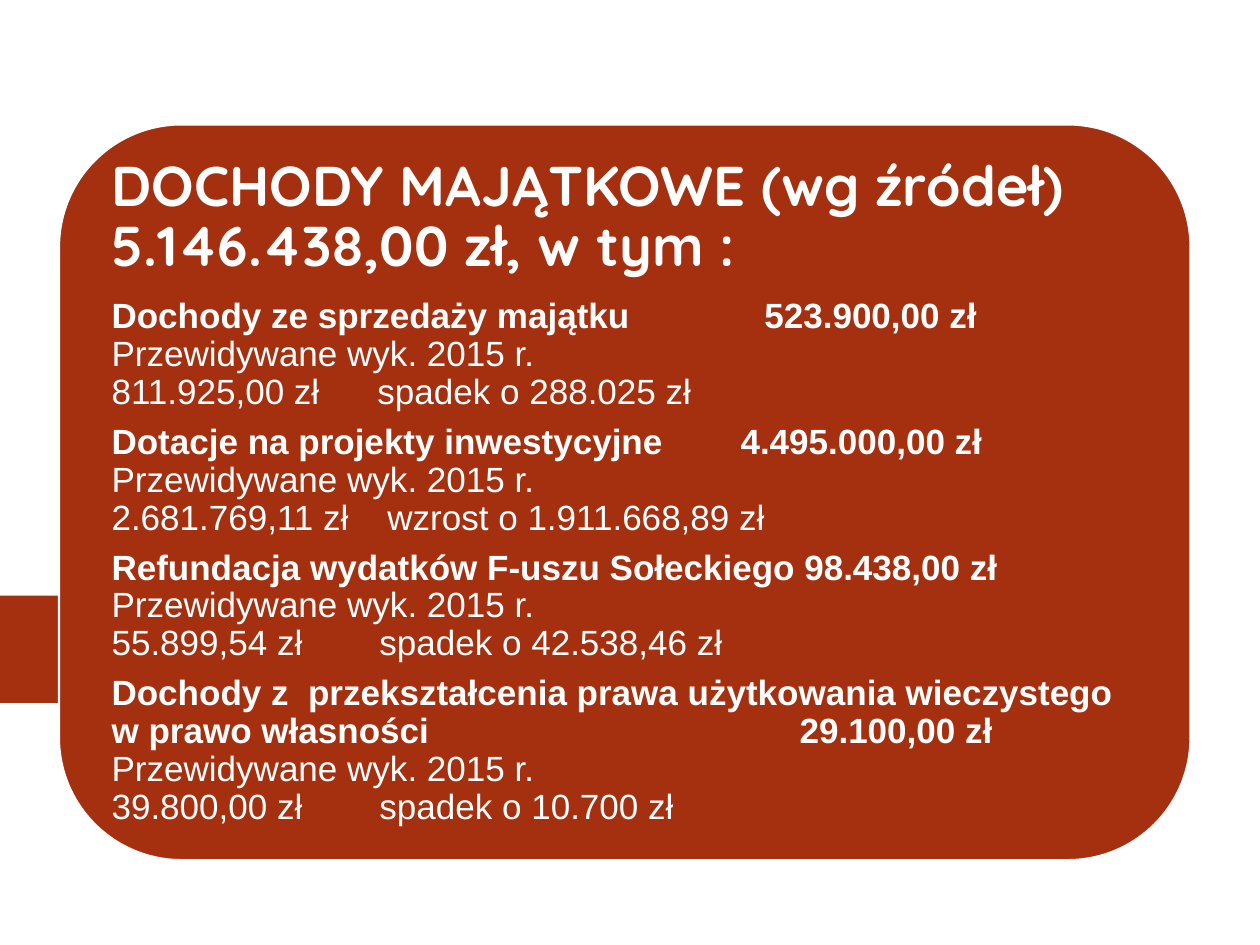
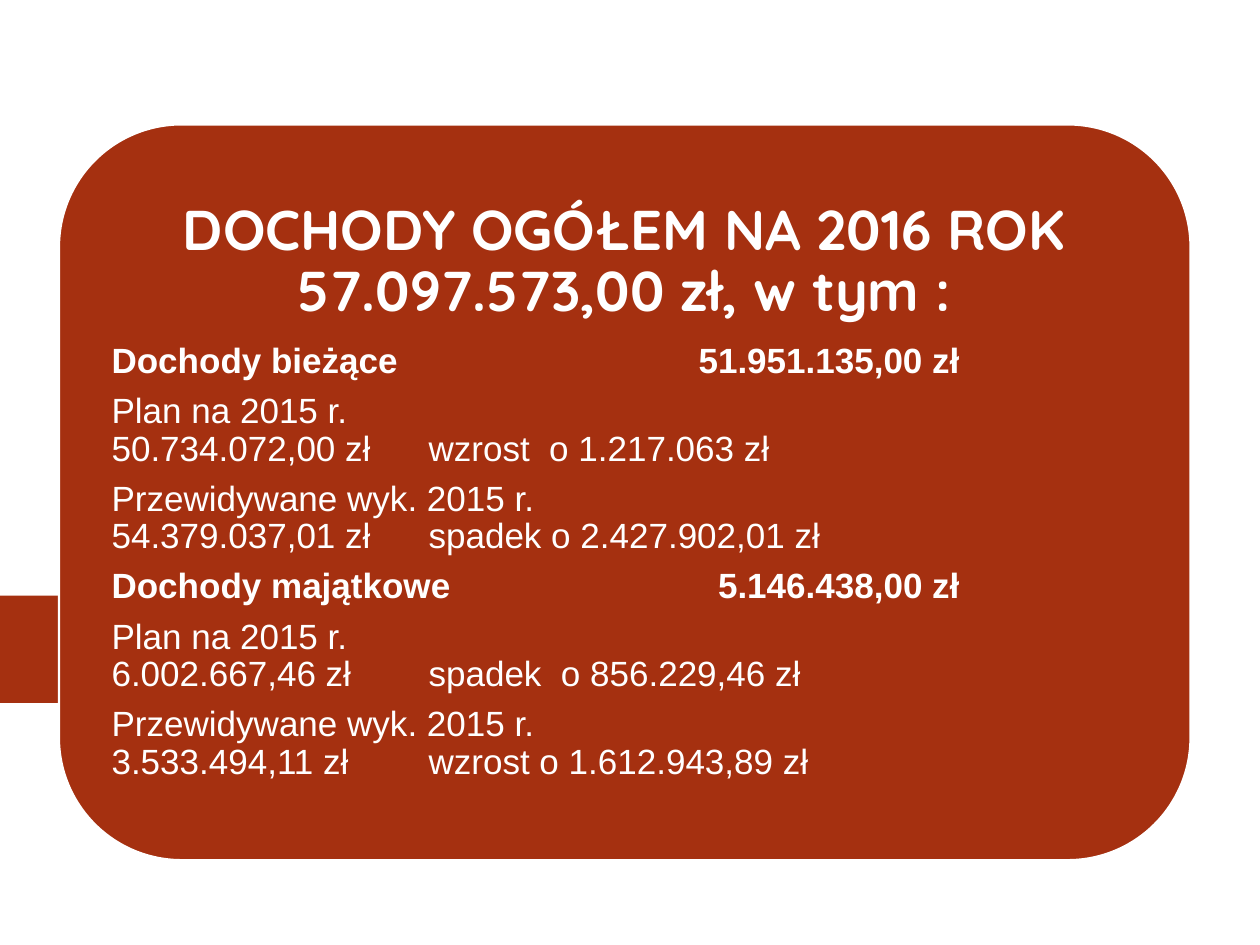
from dataclasses import dataclass
from typing import NamedTuple

from lxml import etree
from pptx import Presentation
from pptx import util as u
from pptx.dml.color import RGBColor
from pptx.enum import shapes, text
from pptx.oxml import ns


@dataclass(frozen=True)
class Theme:
    rust: RGBColor = RGBColor(0xA5, 0x30, 0x10)
    white: RGBColor = RGBColor(0xFF, 0xFF, 0xFF)
    title_font: str = "Quicksand"
    body_font: str = "Arial"
    title_size: int = 32
    body_size: int = 20
    line_spacing: float = 0.9
    gap_ratio: float = 0.35  # space after, as a share of the type size


THEME = Theme()


class Stop(NamedTuple):
    """A tab stop, in centimetres from the text edge."""
    cm: float
    side: str = "l"


@dataclass(frozen=True)
class Entry:
    """A paragraph: bold lines first, then plain lines."""
    bold: tuple[str, ...] = ()
    plain: tuple[str, ...] = ()
    stops: tuple[Stop, ...] = ()


@dataclass(frozen=True)
class IncomePage:
    title: tuple[str, ...]
    align: text.PP_ALIGN
    entries: tuple[Entry, ...]


FORECAST = "Przewidywane wyk. 2015 r."
PLAN = "Plan na 2015 r."
TOTAL_STOP = (Stop(17.1, "r"),)
CHANGE_STOP = (Stop(6.39),)

PAGES = (
    IncomePage(
        ("DOCHODY MAJĄTKOWE (wg źródeł)", "5.146.438,00 zł, w tym :"),
        text.PP_ALIGN.LEFT,
        (
            Entry(("Dochody ze sprzedaży majątku\t523.900,00 zł",),
                  (FORECAST, "811.925,00 zł\tspadek o 288.025 zł"),
                  (Stop(5.36), Stop(13.16))),
            Entry(("Dotacje na projekty inwestycyjne\t4.495.000,00 zł",),
                  (FORECAST, "2.681.769,11 zł\twzrost o 1.911.668,89 zł"),
                  (Stop(5.56), Stop(12.68))),
            Entry(("Refundacja wydatków F-uszu Sołeckiego 98.438,00 zł",),
                  (FORECAST, "55.899,54 zł\tspadek o 42.538,46 zł"),
                  (Stop(5.4),)),
            Entry(("Dochody z  przekształcenia prawa użytkowania wieczystego "
                   "w prawo własności\t29.100,00 zł",),
                  (FORECAST, "39.800,00 zł\tspadek o 10.700 zł"),
                  (Stop(5.4), Stop(13.87))),
        ),
    ),
    IncomePage(
        ("DOCHODY OGÓŁEM NA 2016 ROK", "57.097.573,00 zł, w tym :"),
        text.PP_ALIGN.CENTER,
        (
            Entry(bold=("Dochody bieżące\t51.951.135,00 zł",), stops=TOTAL_STOP),
            Entry(plain=(PLAN, "50.734.072,00 zł\twzrost  o 1.217.063 zł"),
                  stops=CHANGE_STOP),
            Entry(plain=(FORECAST, "54.379.037,01 zł\tspadek o 2.427.902,01 zł"),
                  stops=CHANGE_STOP),
            Entry(bold=("Dochody majątkowe\t5.146.438,00 zł",), stops=TOTAL_STOP),
            Entry(plain=(PLAN, "6.002.667,46 zł\tspadek  o 856.229,46 zł"),
                  stops=CHANGE_STOP),
            Entry(plain=(FORECAST, "3.533.494,11 zł\twzrost o 1.612.943,89 zł"),
                  stops=CHANGE_STOP),
        ),
    ),
)


def add_panel(page, kind, left: float, top: float, width: float, height: float):
    """Add a rust shape without shadow or outline."""
    panel = page.shapes.add_shape(
        kind, u.Cm(left), u.Cm(top), u.Cm(width), u.Cm(height))
    panel.shadow.inherit = False
    panel.fill.solid()
    panel.fill.fore_color.rgb = THEME.rust
    panel.line.fill.background()
    return panel


def add_backdrop(page) -> None:
    """Draw the side arrow and the rounded card over it."""
    add_panel(page, shapes.MSO_SHAPE.PENTAGON, 0, 12.01, 3.81, 2.16)
    card = add_panel(page, shapes.MSO_SHAPE.ROUNDED_RECTANGLE,
                     1.19, 2.51, 22.81, 14.83)
    card.line.color.rgb = THEME.white
    card.line.width = u.Pt(1.25)


def add_text_box(page):
    box = page.shapes.add_textbox(
        u.Cm(1.91), u.Cm(3.23), u.Cm(21.36), u.Cm(13.39))
    frame = box.text_frame
    frame.word_wrap = True
    frame.vertical_anchor = text.MSO_ANCHOR.MIDDLE
    frame.margin_left = frame.margin_right = u.Cm(0.34)
    frame.margin_top = frame.margin_bottom = u.Cm(0.34)
    return frame


def write_lines(para, lines: tuple[str, ...], *, font: str, size: int,
                bold: bool) -> None:
    """Append lines to a paragraph, each after a line break if needed."""
    for line in lines:
        if para.runs:
            para.add_line_break()
        span = para.add_run()
        span.text = line
        span.font.name = font
        span.font.size = u.Pt(size)
        span.font.bold = bold
        span.font.color.rgb = THEME.white


def format_paragraph(para, *, size: int, align=text.PP_ALIGN.LEFT,
                     stops: tuple[Stop, ...] = ()) -> None:
    para.alignment = align
    para.line_spacing = THEME.line_spacing
    para.space_before = u.Pt(0)
    para.space_after = u.Pt(size * THEME.gap_ratio)
    if stops:
        properties = para._p.get_or_add_pPr()
        tab_list = etree.SubElement(properties, ns.qn("a:tabLst"))
        for stop in stops:
            etree.SubElement(tab_list, ns.qn("a:tab"),
                             pos=str(int(u.Cm(stop.cm))), algn=stop.side)


def build_page(deck, content: IncomePage) -> None:
    page = deck.slides.add_slide(deck.slide_layouts[6])
    add_backdrop(page)
    frame = add_text_box(page)

    # Title
    para = frame.paragraphs[0]
    format_paragraph(para, size=THEME.title_size, align=content.align)
    write_lines(para, content.title, font=THEME.title_font,
                size=THEME.title_size, bold=True)

    # Income entries
    for entry in content.entries:
        para = frame.add_paragraph()
        format_paragraph(para, size=THEME.body_size, stops=entry.stops)
        for lines, bold in ((entry.bold, True), (entry.plain, False)):
            write_lines(para, lines, font=THEME.body_font,
                        size=THEME.body_size, bold=bold)


def main() -> None:
    deck = Presentation()
    deck.slide_width, deck.slide_height = u.Cm(25.4), u.Cm(19.05)
    for content in PAGES:
        build_page(deck, content)
    deck.save("out.pptx")


if __name__ == "__main__":
    main()
